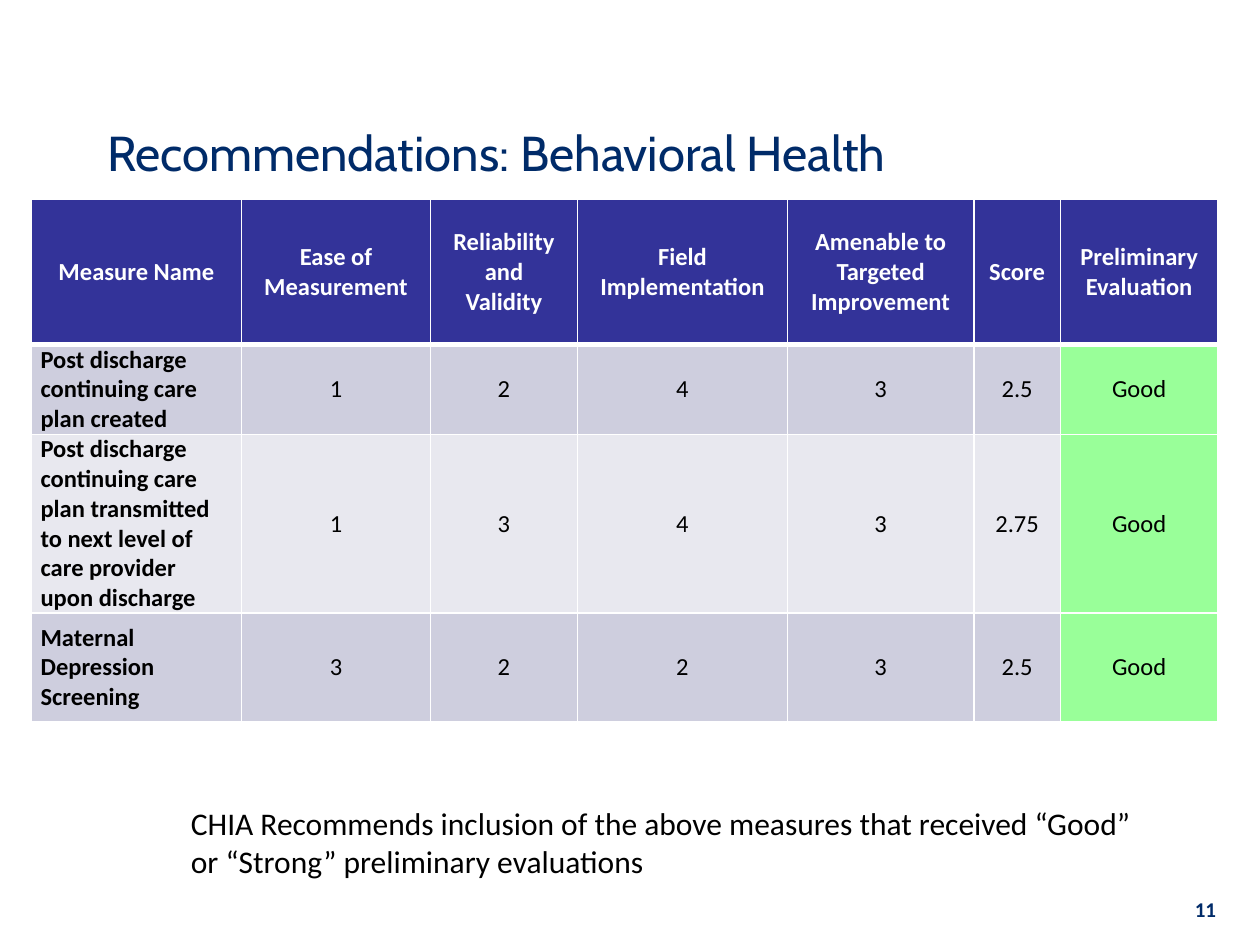
import pptx
import pptx.dml.color
import pptx.enum.text
import pptx.oxml
import pptx.oxml.ns
import pptx.util

Pt = pptx.util.Pt
LEFT = pptx.enum.text.PP_ALIGN.LEFT
CENTER = pptx.enum.text.PP_ALIGN.CENTER
RIGHT = pptx.enum.text.PP_ALIGN.RIGHT
MIDDLE = pptx.enum.text.MSO_ANCHOR.MIDDLE

TITLE = "Recommendations: Behavioral Health"
# Header text, column width, indent of the header on both sides
COLUMNS = [
    ("Measure Name", 120, 0),
    ("Ease of Measurement", 108, 6),
    ("Reliability and Validity", 84, 6),
    ("Field Implementation", 120, 6),
    ("Amenable to Targeted Improvement", 106.5, 6),
    ("Score", 49.5, 0),
    ("Preliminary Evaluation", 90, 6),
]
MEASURES = [
    ("Post discharge continuing care plan created", "1", "2", "4", "3", "2.5", "Good"),
    ("Post discharge continuing care plan transmitted to next level of care "
     "provider upon discharge", "1", "3", "4", "3", "2.75", "Good"),
    ("Maternal Depression Screening", "3", "2", "2", "3", "2.5", "Good"),
]
NOTE = ("CHIA Recommends inclusion of the above measures that received “Good” "
        "or “Strong” preliminary evaluations")
PAGE_NUMBER = "11"

# Left, top, width, height
TITLE_BOX = (54, 48, 612, 78)
NOTE_BOX = (102, 456, 564, 51)
PAGE_NUMBER_BOX = (552, 510, 150, 19.5)
TABLE_LEFT, TABLE_TOP = 18, 114
ROW_HEIGHTS = [83, 47.5, 62, 62]
CELL_MARGIN = 5.2
THIN, THICK = 1, 3

NAVY, WHITE, BLACK = "002B69", "FFFFFF", "000000"
HEADER_FILL, GOOD_FILL = "333399", "99FF99"
BAND_FILLS = ["CECEDE", "E8E8EF"]


def rgb(value):
    return pptx.dml.color.RGBColor.from_string(value)


def write(frame, text, size=14, font="Calibri", color=BLACK, bold=False,
          align=LEFT, indent=0):
    """Fill a text frame with one paragraph, indented equally on both sides."""
    frame.word_wrap = True
    paragraph = frame.paragraphs[0]
    paragraph.alignment = align
    if indent:
        properties = paragraph._p.get_or_add_pPr()
        for side in ("marL", "marR"):
            properties.set(side, str(Pt(indent)))
    run = paragraph.add_run()
    run.text = text
    run.font.size = Pt(size)
    run.font.name = font
    run.font.bold = bold
    run.font.color.rgb = rgb(color)


def add_text(slide, box, text, **text_format):
    shape = slide.shapes.add_textbox(*map(Pt, box))
    write(shape.text_frame, text, **text_format)
    return shape


def set_borders(cell, top, bottom):
    """Draw white lines on all sides; in the XML they must precede the fill."""
    properties = cell._tc.get_or_add_tcPr()
    for side, width in (("L", THIN), ("R", THIN), ("T", top), ("B", bottom)):
        properties.append(pptx.oxml.parse_xml(
            f'<a:ln{side} {pptx.oxml.ns.nsdecls("a")} w="{Pt(width)}">'
            f'<a:solidFill><a:srgbClr val="{WHITE}"/></a:solidFill></a:ln{side}>'))


def fill_cell(cell, text, background, top=THIN, bottom=THIN, **text_format):
    set_borders(cell, top, bottom)
    cell.fill.solid()
    cell.fill.fore_color.rgb = rgb(background)
    cell.vertical_anchor = MIDDLE
    cell.margin_left = cell.margin_right = Pt(CELL_MARGIN)
    cell.margin_top = cell.margin_bottom = 0
    write(cell.text_frame, text, **text_format)


def add_measure_table(slide):
    table_width = sum(width for _, width, _ in COLUMNS)
    table = slide.shapes.add_table(
        len(ROW_HEIGHTS), len(COLUMNS), Pt(TABLE_LEFT), Pt(TABLE_TOP),
        Pt(table_width), Pt(sum(ROW_HEIGHTS))).table
    for row, height in zip(table.rows, ROW_HEIGHTS):
        row.height = Pt(height)

    for column, (header, width, indent) in enumerate(COLUMNS):
        table.columns[column].width = Pt(width)
        fill_cell(table.cell(0, column), header, HEADER_FILL, bottom=THICK,
                  color=WHITE, bold=True, align=CENTER, indent=indent)

    for index, measure in enumerate(MEASURES):
        band_fill = BAND_FILLS[index % len(BAND_FILLS)]
        top = THICK if index == 0 else THIN
        for column, value in enumerate(measure):
            is_name = column == 0
            fill_cell(table.cell(index + 1, column), value,
                      GOOD_FILL if value == "Good" else band_fill, top=top,
                      bold=is_name, align=LEFT if is_name else CENTER)


def main():
    presentation = pptx.Presentation()
    presentation.slide_width, presentation.slide_height = Pt(720), Pt(540)
    title_only = presentation.slide_layouts[5]
    slide = presentation.slides.add_slide(title_only)

    title = slide.shapes.title
    title.left, title.top, title.width, title.height = map(Pt, TITLE_BOX)
    title.text_frame.vertical_anchor = MIDDLE
    write(title.text_frame, TITLE, size=28, font="Cabin", color=NAVY)

    add_measure_table(slide)
    add_text(slide, NOTE_BOX, NOTE, size=18)
    page_number = add_text(slide, PAGE_NUMBER_BOX, PAGE_NUMBER, size=12,
                           color=NAVY, bold=True, align=RIGHT)
    page_number.text_frame.vertical_anchor = MIDDLE
    presentation.save("out.pptx")


if __name__ == "__main__":
    main()
